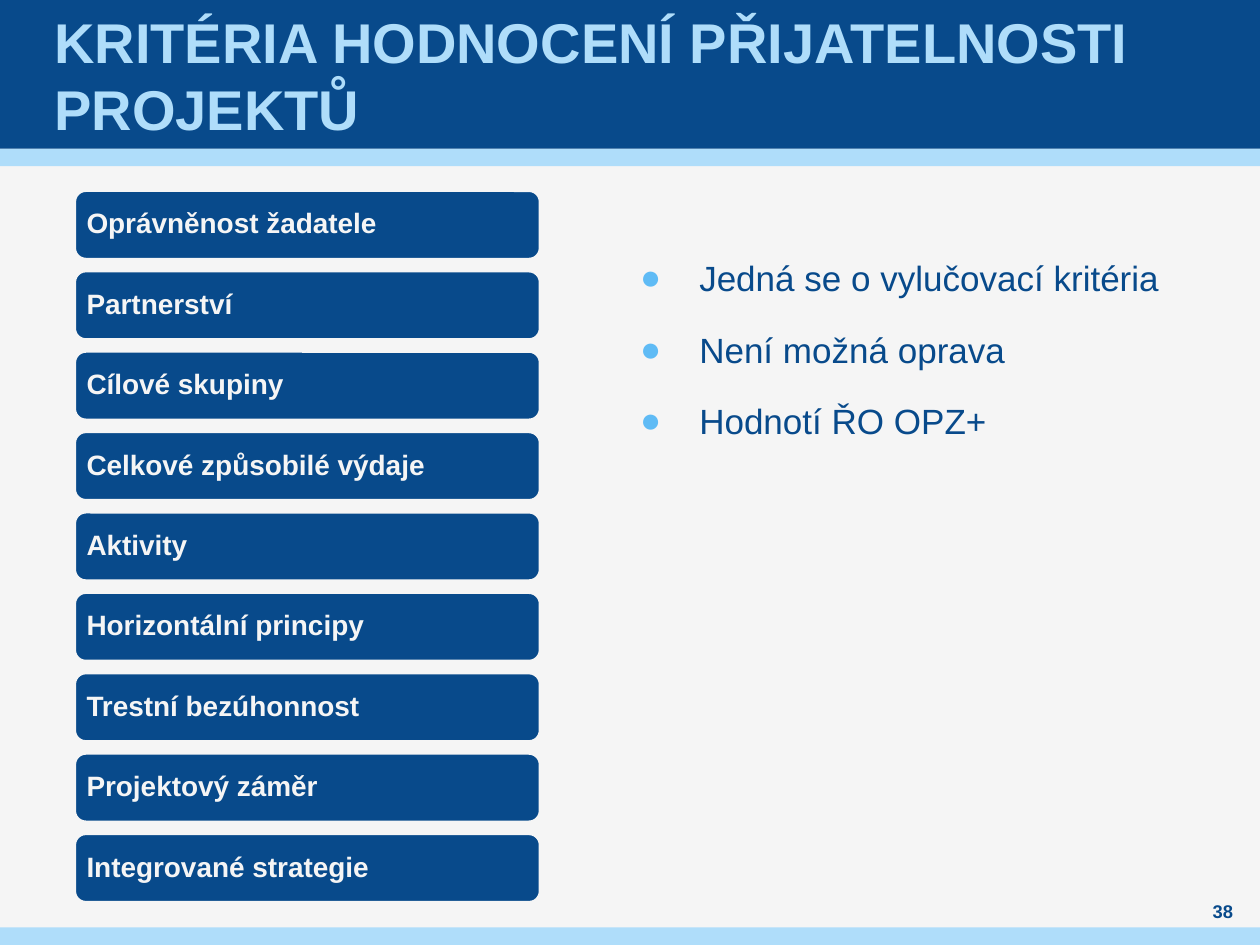
from dataclasses import dataclass
from typing import Any

from lxml.etree import SubElement
from pptx import Presentation
from pptx.dml.color import RGBColor
from pptx.enum.shapes import MSO_SHAPE
from pptx.enum.text import MSO_ANCHOR, MSO_AUTO_SIZE, PP_ALIGN
from pptx.oxml.ns import qn
from pptx.util import Inches, Pt

NAVY = RGBColor(0x08, 0x4A, 0x8B)
PALE_BLUE = RGBColor(0xAF, 0xDD, 0xFA)
BULLET_BLUE = RGBColor(0x5F, 0xBB, 0xF5)
OFF_WHITE = RGBColor(0xF5, 0xF5, 0xF5)

CRITERIA = [
    "Oprávněnost žadatele", "Partnerství", "Cílové skupiny",
    "Celkové způsobilé výdaje", "Aktivity", "Horizontální principy",
    "Trestní bezúhonnost", "Projektový záměr", "Integrované strategie",
]
NOTES = ["Jedná se o vylučovací kritéria", "Není možná oprava", "Hodnotí ŘO OPZ+"]


@dataclass(frozen=True)
class Box:
    left: float
    top: float
    width: float
    height: float

    def lengths(self) -> list[int]:
        return [Inches(v) for v in (self.left, self.top, self.width, self.height)]


@dataclass(frozen=True)
class Band:
    box: Box
    color: RGBColor


BANDS = [
    Band(Box(0, 1.18, 10, 0.14), PALE_BLUE),
    Band(Box(0, 0, 10, 1.18), NAVY),
    Band(Box(0, 7.36, 10, 0.14), PALE_BLUE),
]
TITLE_BOX = Box(0.39, 0, 9.21, 1.18)
NOTES_BOX = Box(5.08, 1.97, 4.33, 4.72)
NUMBER_BOX = Box(9.45, 7.13, 0.51, 0.2)
FIRST_CRITERION = Box(0.59, 1.51, 3.7, 0.55)
CRITERION_PITCH = 0.638


def apply(target: Any, values: dict[str, Any]) -> None:
    for name, value in values.items():
        setattr(target, name, value)


def set_frame(frame: Any, side: float, vertical: float, anchor: Any) -> None:
    apply(frame, {
        "word_wrap": True, "auto_size": MSO_AUTO_SIZE.NONE, "vertical_anchor": anchor,
        "margin_left": Inches(side), "margin_right": Inches(side),
        "margin_top": Inches(vertical), "margin_bottom": Inches(vertical),
    })


def write(paragraph: Any, text: str, size: float, color: RGBColor,
          bold: bool = True, **layout: Any) -> None:
    run = paragraph.add_run()
    run.text = text
    apply(run.font, {"name": "Arial", "size": Pt(size), "bold": bold})
    run.font.color.rgb = color
    apply(paragraph, {"alignment": PP_ALIGN.LEFT, **layout})


def add_filled(slide: Any, kind: Any, box: Box, color: RGBColor) -> Any:
    shape = slide.shapes.add_shape(kind, *box.lengths())
    shape.shadow.inherit = False
    shape.fill.solid()
    shape.fill.fore_color.rgb = color
    shape.line.fill.background()
    return shape


def add_criterion(slide: Any, index: int, text: str) -> None:
    first = FIRST_CRITERION
    box = Box(first.left, first.top + index * CRITERION_PITCH, first.width, first.height)
    bar = add_filled(slide, MSO_SHAPE.ROUNDED_RECTANGLE, box, NAVY)
    bar.line.color.rgb = OFF_WHITE
    bar.line.width = Pt(2)
    set_frame(bar.text_frame, 0.07, 0.07, MSO_ANCHOR.MIDDLE)
    write(bar.text_frame.paragraphs[0], text, 16, OFF_WHITE, line_spacing=0.9)


def add_bullet(paragraph: Any) -> None:
    properties = paragraph._p.get_or_add_pPr()
    properties.set("marL", str(Inches(0.47)))
    properties.set("indent", str(Inches(-0.47)))
    color = SubElement(properties, qn("a:buClr"))
    SubElement(color, qn("a:srgbClr"), val=str(BULLET_BLUE))
    SubElement(properties, qn("a:buFont"), typeface="Arial")
    SubElement(properties, qn("a:buChar"), char="●")


def add_notes(slide: Any) -> None:
    frame = slide.shapes.add_textbox(*NOTES_BOX.lengths()).text_frame
    set_frame(frame, 0, 0, MSO_ANCHOR.TOP)
    for index, text in enumerate(NOTES):
        paragraph = frame.add_paragraph() if index else frame.paragraphs[0]
        write(paragraph, text, 20, NAVY, bold=False, line_spacing=Pt(28.8),
              space_before=Pt(6), space_after=Pt(6))
        add_bullet(paragraph)


def format_title(slide: Any) -> None:
    title = slide.shapes.title
    apply(title, dict(zip(("left", "top", "width", "height"), TITLE_BOX.lengths())))
    set_frame(title.text_frame, 0.04, 0, MSO_ANCHOR.MIDDLE)
    write(title.text_frame.paragraphs[0],
          "KRITÉRIA HODNOCENÍ PŘIJATELNOSTI PROJEKTŮ", 32, PALE_BLUE)
    # Bring the title in front of the header band
    slide.shapes._spTree.append(title._element)


def main() -> None:
    deck = Presentation()
    deck.slide_width, deck.slide_height = Inches(10), Inches(7.5)
    slide = deck.slides.add_slide(deck.slide_layouts[5])
    slide.background.fill.solid()
    slide.background.fill.fore_color.rgb = OFF_WHITE

    # Header and footer bands, then the title
    for band in BANDS:
        add_filled(slide, MSO_SHAPE.RECTANGLE, band.box, band.color)
    format_title(slide)

    # Remarks on the right, criteria on the left
    add_notes(slide)
    for index, text in enumerate(CRITERIA):
        add_criterion(slide, index, text)

    # Page number
    number = slide.shapes.add_textbox(*NUMBER_BOX.lengths()).text_frame
    set_frame(number, 0, 0, MSO_ANCHOR.MIDDLE)
    write(number.paragraphs[0], "38", 10.5, NAVY, alignment=PP_ALIGN.CENTER)

    deck.save("out.pptx")


if __name__ == "__main__":
    main()
